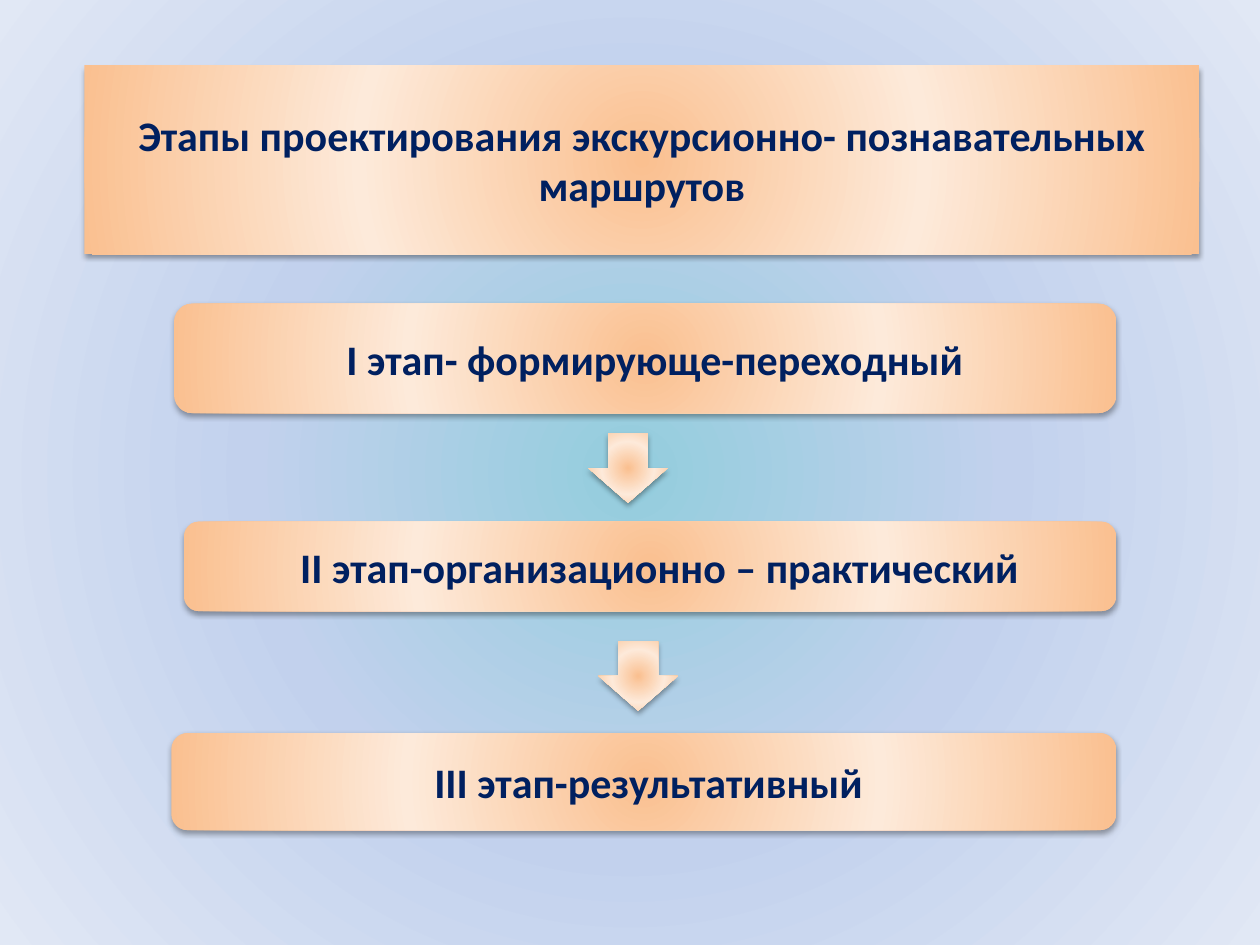
from pptx import Presentation
from pptx.dml.color import RGBColor as RGB
from pptx.enum.shapes import MSO_SHAPE as Kind
from pptx.enum.text import MSO_ANCHOR as Anchor, PP_ALIGN as Align
from pptx.oxml import parse_xml
from pptx.oxml.ns import nsdecls
from pptx.util import Pt

NAVY = RGB(0x00, 0x20, 0x60)
PEACH = RGB(0xFA, 0xC0, 0x90)
CREAM = RGB(0xFD, 0xEA, 0xDA)
TEAL = RGB(0x93, 0xCD, 0xDD)
BLUE = RGB(0xC2, 0xD1, 0xED)
PALE = RGB(0xE1, 0xE8, 0xF5)

GLOW = [(0, PEACH), (50, CREAM), (100, PEACH)]
SKY = [(0, TEAL), (48, BLUE), (100, PALE)]
FONT = {"name": "Calibri", "size": Pt(24), "bold": True}
FRAME = {"word_wrap": True, "vertical_anchor": Anchor.MIDDLE}

HEAD = "Этапы проектирования экскурсионно- познавательных маршрутов"
STEPS = [
    ("I этап- формирующе-переходный", (99.4, 173.5, 538.6, 62.6), 18),
    ("II этап-организационно – практический", (105.1, 298.1, 532.8, 51.1), 18),
    ("III этап-результативный", (97.9, 419, 540, 55.4), 12.6),
]
ARROWS = [(336.2, 247.7), (342, 366.5)]


def apply(obj, vals):
    """Set each attribute named in a dict."""
    for key, val in vals.items():
        setattr(obj, key, val)


def paint(fill, host, stops):
    """Fill with a gradient that spreads from the centre."""
    fill.gradient()
    old = host.xpath(".//a:gradFill")[0]
    marks = "".join(
        f'<a:gs pos="{pos * 1000}"><a:srgbClr val="{tone}"/></a:gs>'
        for pos, tone in stops
    )
    new = parse_xml(
        f'<a:gradFill {nsdecls("a")} rotWithShape="1"><a:gsLst>{marks}</a:gsLst>'
        '<a:path path="circle"><a:fillToRect l="50000" t="50000" r="50000"'
        ' b="50000"/></a:path></a:gradFill>'
    )
    old.getparent().replace(old, new)


def style(shape):
    """Give a shape the peach glow, no outline and a soft shadow."""
    paint(shape.fill, shape.element, GLOW)
    shape.line.fill.background()
    shape.shadow.inherit = False
    shape.element.xpath(".//a:effectLst")[0].append(parse_xml(
        f'<a:outerShdw {nsdecls("a")} blurRad="{Pt(3.1)}" dist="{Pt(1.8)}"'
        ' dir="5400000" rotWithShape="0"><a:srgbClr val="000000">'
        '<a:alpha val="35000"/></a:srgbClr></a:outerShdw>'
    ))


def write(shape, text, left=7.2):
    """Put centred navy text into a shape."""
    frame = shape.text_frame
    apply(frame, FRAME | {"margin_left": Pt(left)})
    para = frame.paragraphs[0]
    para.alignment = Align.CENTER
    run = para.add_run()
    run.text = text
    apply(run.font, FONT)
    run.font.color.rgb = NAVY


def add_head(slide):
    """Place and format the title."""
    title = slide.shapes.title
    apply(title, {"left": Pt(48.2), "top": Pt(37.4),
                  "width": Pt(637.2), "height": Pt(108)})
    style(title)
    write(title, HEAD)


def add_step(slide, text, box, left):
    """Add one rounded stage box."""
    shape = slide.shapes.add_shape(Kind.ROUNDED_RECTANGLE, *map(Pt, box))
    style(shape)
    write(shape, text, left)


def add_arrow(slide, left, top):
    """Add one arrow between stages."""
    style(slide.shapes.add_shape(
        Kind.DOWN_ARROW, Pt(left), Pt(top), Pt(45.4), Pt(39.6)))


def main():
    """Build and save the slide."""
    deck = Presentation()
    apply(deck, {"slide_width": Pt(720), "slide_height": Pt(540)})
    slide = deck.slides.add_slide(deck.slide_layouts[5])
    paint(slide.background.fill, slide.element, SKY)
    add_head(slide)
    for step in STEPS:
        add_step(slide, *step)
    for spot in ARROWS:
        add_arrow(slide, *spot)
    deck.save("out.pptx")


if __name__ == "__main__":
    main()
